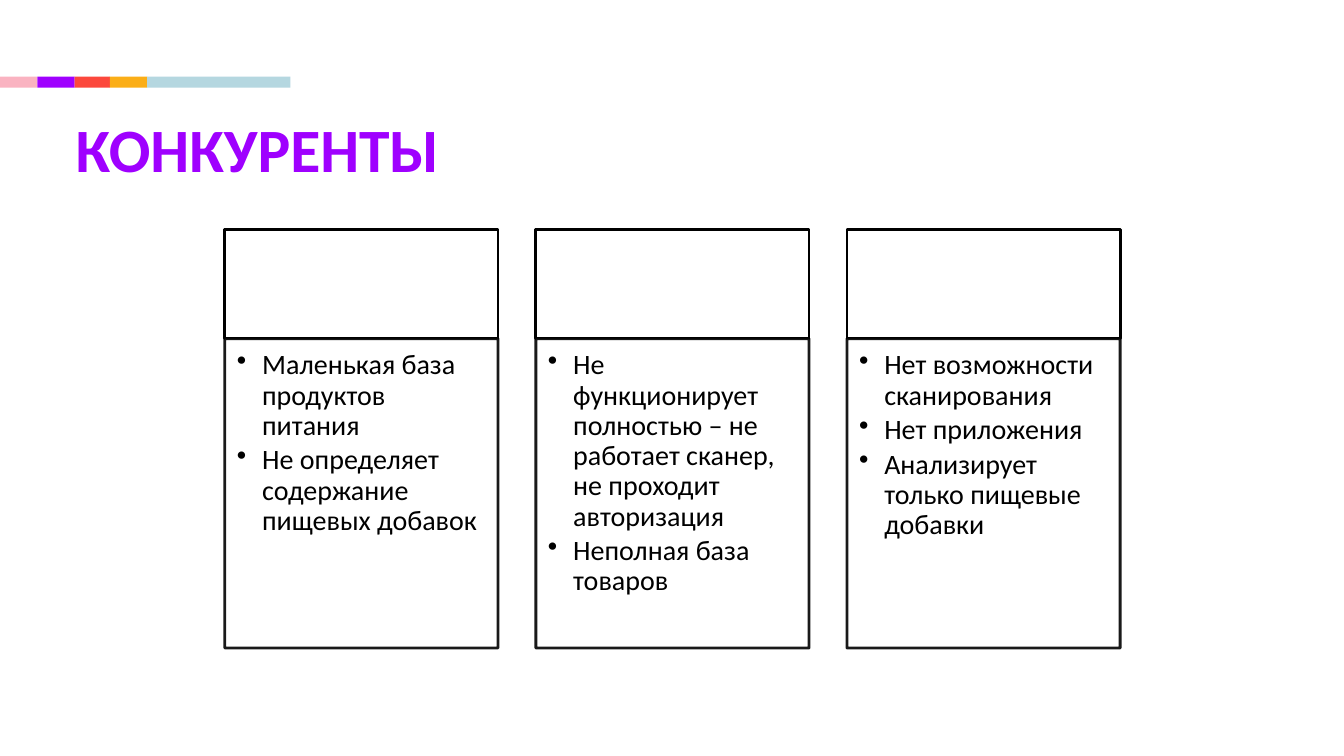
from lxml.etree import SubElement
from pptx import Presentation
from pptx.dml.color import RGBColor
from pptx.enum.shapes import MSO_SHAPE as Shape
from pptx.enum.text import MSO_ANCHOR as Anchor, PP_ALIGN as Align
from pptx.oxml.ns import qn
from pptx.util import Inches, Pt

PINK = RGBColor(0xFA, 0xB3, 0xC1)
VIOLET = RGBColor(0x9F, 0x00, 0xFF)
RED = RGBColor(0xFC, 0x48, 0x3C)
AMBER = RGBColor(0xFB, 0xAE, 0x17)
PALE_BLUE = RGBColor(0xB5, 0xD7, 0xE0)
BLACK = RGBColor(0, 0, 0)
WHITE = RGBColor(0xFF, 0xFF, 0xFF)

FONT = "Calibri"
STRIPES = [(0.37, PINK), (0.37, VIOLET), (0.35, RED), (0.37, AMBER), (1.42, PALE_BLUE)]
COMPETITORS = [
    ["Маленькая база продуктов питания",
     "Не определяет содержание пищевых добавок"],
    ["Не функционирует полностью – не работает сканер, не проходит авторизация",
     "Неполная база товаров"],
    ["Нет возможности сканирования",
     "Нет приложения",
     "Анализирует только пищевые добавки"],
]
CARD_WIDTH, CARD_HEIGHT, CARD_PITCH = 2.71, 4.15, 3.085
HEADER_HEIGHT = 1.08


def set_format(target, **values):
    for key, value in values.items():
        setattr(target, key, value)


def add_box(slide, left, top, width, height, fill, outline=None):
    box = slide.shapes.add_shape(
        Shape.RECTANGLE, Inches(left), Inches(top), Inches(width), Inches(height))
    box.shadow.inherit = False
    box.fill.solid()
    box.fill.fore_color.rgb = fill
    if outline is None:
        box.line.fill.background()
    else:
        box.line.color.rgb = outline
        box.line.width = Pt(2)
    return box


def set_opacity(box, percent):
    """Apply one opacity to both the fill and the outline."""
    for color in box.element.spPr.iter(qn("a:srgbClr")):
        SubElement(color, qn("a:alpha"), val=str(percent * 1000))


def add_text(paragraph, text, size, color, bold=False):
    run = paragraph.add_run()
    run.text = text
    set_format(run.font, name=FONT, size=Pt(size), bold=bold)
    run.font.color.rgb = color


def add_bullet(paragraph, text):
    set_format(paragraph, alignment=Align.LEFT, line_spacing=0.9, space_after=Pt(3))
    properties = paragraph._p.get_or_add_pPr()
    properties.set("marL", str(Inches(0.25)))
    properties.set("indent", str(-Inches(0.25)))
    SubElement(properties, qn("a:buChar"), char="•")
    add_text(paragraph, text, 20, BLACK)


def add_stripes(slide, left, top, height):
    for width, color in STRIPES:
        add_box(slide, left, top, width, height, color)
        left += width


def add_title(slide, left, top, width, height):
    title = slide.shapes.add_textbox(
        Inches(left), Inches(top), Inches(width), Inches(height))
    frame = title.text_frame
    set_format(frame, word_wrap=True, margin_left=0, margin_right=0,
               margin_top=Inches(0.01), margin_bottom=0)
    heading = frame.paragraphs[0]
    heading.space_before = Pt(1.1)
    add_text(heading, "КОНКУРЕНТЫ", 44, VIOLET, bold=True)


def add_card(slide, left, top, width, height, drawbacks):
    add_box(slide, left, top, width, HEADER_HEIGHT, WHITE, BLACK)
    body = add_box(slide, left, top + HEADER_HEIGHT, width, height - HEADER_HEIGHT,
                   WHITE, BLACK)
    set_opacity(body, 90)
    frame = body.text_frame
    set_format(frame, word_wrap=True, vertical_anchor=Anchor.TOP,
               margin_left=Inches(0.12), margin_top=Inches(0.12),
               margin_right=Inches(0.16), margin_bottom=Inches(0.17))
    for index, drawback in enumerate(drawbacks):
        paragraph = frame.add_paragraph() if index else frame.paragraphs[0]
        add_bullet(paragraph, drawback)


def add_cards(slide, left, top):
    for index, drawbacks in enumerate(COMPETITORS):
        add_card(slide, left + index * CARD_PITCH, top, CARD_WIDTH, CARD_HEIGHT, drawbacks)


def main():
    deck = Presentation()
    set_format(deck, slide_width=Inches(13.33), slide_height=Inches(7.5))
    slide = deck.slides.add_slide(deck.slide_layouts[6])
    add_stripes(slide, 0, 0.76, 0.11)
    add_title(slide, 0.75, 1.09, 3.88, 0.76)
    add_cards(slide, 2.23, 2.28)
    deck.save("out.pptx")


if __name__ == "__main__":
    main()
